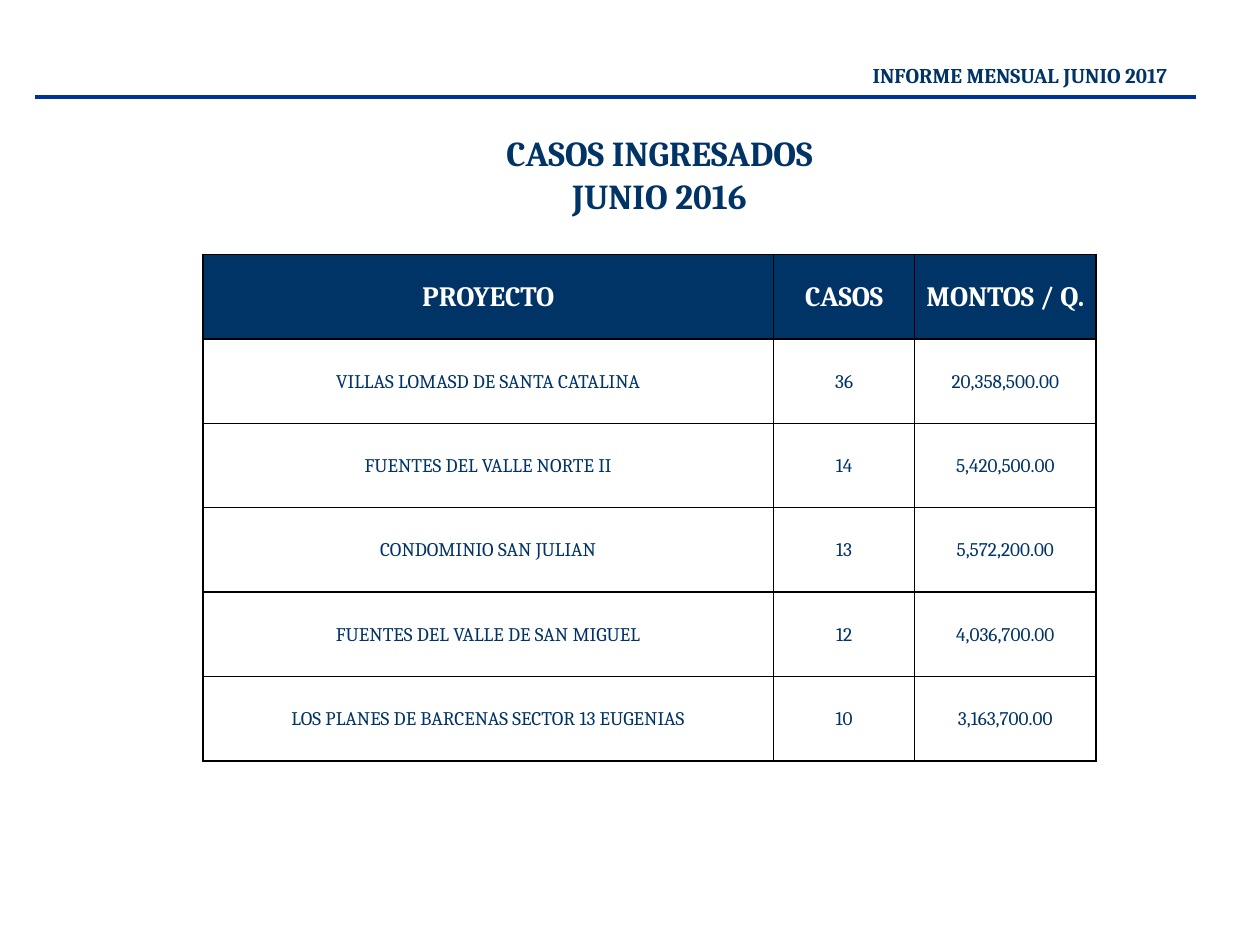
from dataclasses import dataclass
from typing import Any, NamedTuple

from lxml.etree import SubElement
from pptx import Presentation
from pptx.dml.color import RGBColor
from pptx.enum.text import MSO_ANCHOR, MSO_AUTO_SIZE, PP_ALIGN
from pptx.oxml.ns import qn
from pptx.util import Inches, Pt


@dataclass(frozen=True)
class Theme:
    font: str = "Cambria"
    navy: str = "003366"
    rule: str = "003399"
    white: str = "FFFFFF"
    border: str = "000000"
    title_size: int = 20
    heading_size: int = 16
    header_size: int = 12
    body_size: int = 11


class Area(NamedTuple):
    left: float
    top: float
    width: float
    height: float

    def lengths(self) -> list[int]:
        return [Inches(value) for value in self]


class Project(NamedTuple):
    name: str
    cases: str
    amount: str


THEME = Theme()
HEADINGS = Project("PROYECTO", "CASOS", "MONTOS / Q.")
PROJECTS = [
    Project("VILLAS LOMASD DE SANTA CATALINA", "36", "20,358,500.00"),
    Project("FUENTES DEL VALLE NORTE II", "14", "5,420,500.00"),
    Project("CONDOMINIO SAN JULIAN", "13", "5,572,200.00"),
    Project("FUENTES DEL VALLE DE SAN MIGUEL", "12", "4,036,700.00"),
    Project("LOS PLANES DE BARCENAS SECTOR 13 EUGENIAS", "10", "3,163,700.00"),
]
COLUMN_WIDTHS = [4.53, 1.12, 1.44]
ROW_HEIGHT = 0.67


def apply_format(target: Any, values: dict[str, Any]) -> None:
    for name, value in values.items():
        setattr(target, name, value)


def write_lines(frame: Any, lines: list[str], size: int, color: str, bold: bool, gap: float = 0) -> None:
    for index, line in enumerate(lines):
        para = frame.paragraphs[0] if index == 0 else frame.add_paragraph()
        apply_format(para, {"alignment": PP_ALIGN.CENTER, "space_before": Pt(gap if index else 0)})
        span = para.add_run()
        span.text = line
        apply_format(span.font, {"name": THEME.font, "size": Pt(size), "bold": bold})
        span.font.color.rgb = RGBColor.from_string(color)


def add_borders(cell: Any) -> None:
    properties = cell._tc.get_or_add_tcPr()
    for index, side in enumerate(("a:lnL", "a:lnR", "a:lnT", "a:lnB")):
        line = properties.makeelement(qn(side), {"w": str(Pt(1))})
        fill = SubElement(line, qn("a:solidFill"))
        SubElement(fill, qn("a:srgbClr"), {"val": THEME.border})
        properties.insert(index, line)


def fill_cell(cell: Any, text: str, heading: bool) -> None:
    apply_format(cell, {
        "margin_left": Inches(0.01),
        "margin_right": Inches(0.01),
        "margin_top": Inches(0.01),
        "margin_bottom": 0,
        "vertical_anchor": MSO_ANCHOR.MIDDLE,
    })
    if heading:
        cell.fill.solid()
        cell.fill.fore_color.rgb = RGBColor.from_string(THEME.navy)
        write_lines(cell.text_frame, [text], THEME.heading_size, THEME.white, True)
    else:
        cell.fill.background()
        write_lines(cell.text_frame, [text], THEME.body_size, THEME.navy, False)
    add_borders(cell)


def add_projects_table(slide: Any, left: float, top: float) -> None:
    rows = [HEADINGS, *PROJECTS]
    area = Area(left, top, sum(COLUMN_WIDTHS), ROW_HEIGHT * len(rows))
    table = slide.shapes.add_table(len(rows), len(COLUMN_WIDTHS), *area.lengths()).table
    table.horz_banding = False
    for column, width in zip(table.columns, COLUMN_WIDTHS):
        column.width = Inches(width)
    for row_index, project in enumerate(rows):
        table.rows[row_index].height = Inches(ROW_HEIGHT)
        for column_index, text in enumerate(project):
            fill_cell(table.cell(row_index, column_index), text, row_index == 0)


def add_header(slide: Any) -> None:
    rule = slide.shapes.add_connector(1, Inches(0.28), Inches(0.77), Inches(9.49), Inches(0.77))
    rule.line.width = Pt(2.25)
    rule.line.color.rgb = RGBColor.from_string(THEME.rule)
    SubElement(rule._element.spPr, qn("a:effectLst"))
    box = slide.shapes.add_textbox(*Area(6.77, 0.45, 2.65, 0.3).lengths())
    apply_format(box.text_frame, {"word_wrap": False, "auto_size": MSO_AUTO_SIZE.SHAPE_TO_FIT_TEXT})
    write_lines(box.text_frame, ["INFORME MENSUAL JUNIO 2017"], THEME.header_size, THEME.navy, True)


def add_title(slide: Any) -> None:
    title = slide.shapes.title
    area = Area(1.93, 0.99, 6.61, 0.82)
    apply_format(title, dict(zip(("left", "top", "width", "height"), area.lengths())))
    apply_format(title.text_frame, {
        "word_wrap": True,
        "auto_size": MSO_AUTO_SIZE.NONE,
        "vertical_anchor": MSO_ANCHOR.TOP,
    })
    write_lines(title.text_frame, ["CASOS INGRESADOS", "JUNIO 2016"], THEME.title_size, THEME.navy, True, 1)


def main() -> None:
    deck = Presentation()
    apply_format(deck, {"slide_width": Inches(10), "slide_height": Inches(7.5)})
    slide = deck.slides.add_slide(deck.slide_layouts[5])
    add_projects_table(slide, 1.61, 2.02)
    add_header(slide)
    add_title(slide)
    deck.save("out.pptx")


if __name__ == "__main__":
    main()
